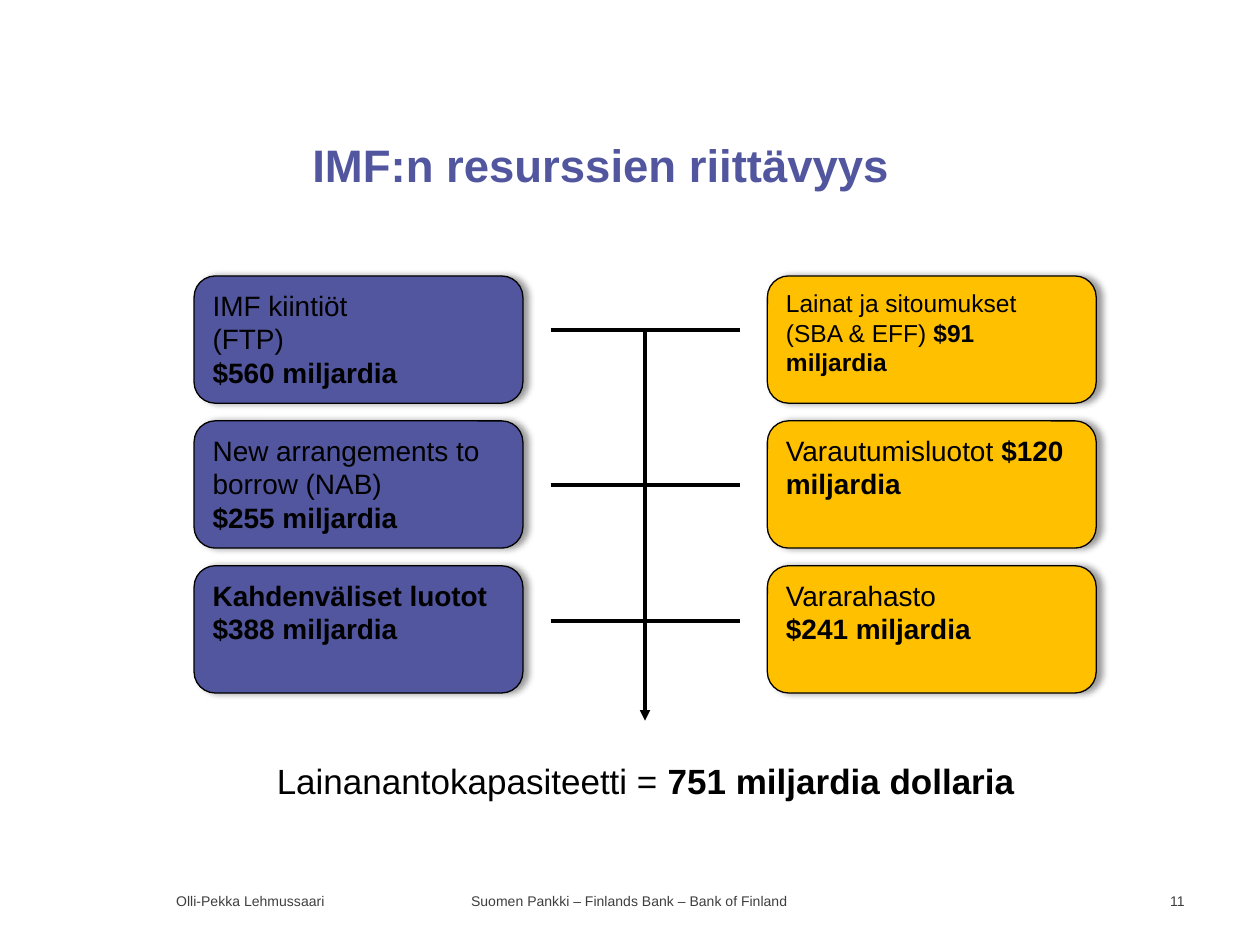
"""Build the slide on the sufficiency of IMF resources."""
from lxml import etree
from pptx import Presentation
from pptx.dml.color import RGBColor
from pptx.enum.shapes import MSO_CONNECTOR, MSO_SHAPE
from pptx.enum.text import MSO_ANCHOR, PP_ALIGN
from pptx.oxml.ns import qn
from pptx.util import Pt

LEFT, CENTER, RIGHT = PP_ALIGN.LEFT, PP_ALIGN.CENTER, PP_ALIGN.RIGHT
TOP, MIDDLE, BOTTOM = MSO_ANCHOR.TOP, MSO_ANCHOR.MIDDLE, MSO_ANCHOR.BOTTOM
ROUNDED, STRAIGHT = MSO_SHAPE.ROUNDED_RECTANGLE, MSO_CONNECTOR.STRAIGHT
INDIGO = RGBColor(0x51, 0x56, 0x9E)
AMBER = RGBColor(0xFF, 0xC0, 0x00)
BLACK = RGBColor(0, 0, 0)
GREY = RGBColor(0x3F, 0x3E, 0x3E)

TITLE = [[("IMF:n resurssien riittävyys", True)]]
RESOURCES = [
    (16, [[("IMF kiintiöt", False)], [("(FTP)", False)], [("$560 miljardia", True)]]),
    (16, [[("New arrangements to borrow (NAB)", False)], [("$255 miljardia", True)]]),
    (16, [[("Kahdenväliset luotot $388 miljardia", True)]]),
]
COMMITMENTS = [
    (14, [[("Lainat ja sitoumukset (SBA & EFF) ", False), ("$91 miljardia", True)]]),
    (16, [[("Varautumisluotot ", False), ("$120 miljardia", True)]]),
    (16, [[("Vararahasto", False)], [("$241 miljardia", True)]]),
]
CAPACITY = [[("Lainanantokapasiteetti = ", False), ("751 miljardia dollaria", True)]]
FOOTERS = [
    ("Olli-Pekka Lehmussaari", 93.6, 151.9, LEFT),
    ("Suomen Pankki – Finlands Bank – Bank of Finland", 254.2, 211, CENTER),
    ("11", 643, 41, RIGHT),
]

COLUMNS = [(110.9, INDIGO, RESOURCES), (438.5, AMBER, COMMITMENTS)]
CARD_TOP, CARD_PITCH, CARD_WIDTH, CARD_HEIGHT = 157.7, 82.8, 187.9, 72.7
RUNG_LEFT, RUNG_RIGHT, RUNG_TOPS = 314.6, 422.6, (188.6, 277.2, 355)
ARROW_END = 411.8


def write(shape, paragraphs, size=16, color=BLACK, align=LEFT, anchor=TOP):
    frame = shape.text_frame
    frame.word_wrap = True
    frame.vertical_anchor = anchor
    for index, spans in enumerate(paragraphs):
        para = frame.paragraphs[0] if index == 0 else frame.add_paragraph()
        para.alignment = align
        for text, bold in spans:
            span = para.add_run()
            span.text = text
            span.font.name = "Arial"
            span.font.size = Pt(size)
            span.font.bold = bold
            span.font.color.rgb = color


def add_text(page, place, paragraphs, **style):
    box = page.shapes.add_textbox(*map(Pt, place))
    write(box, paragraphs, **style)


def add_card(page, left, top, fill, size, paragraphs):
    card = page.shapes.add_shape(ROUNDED, *map(Pt, (left, top, CARD_WIDTH, CARD_HEIGHT)))
    card.fill.solid()
    card.fill.fore_color.rgb = fill
    card.line.color.rgb = BLACK
    card.line.width = Pt(0.75)
    card.shadow.inherit = False
    effects = card.element.spPr.find(qn("a:effectLst"))
    shadow = etree.SubElement(effects, qn("a:outerShdw"), blurRad=str(Pt(4)),
                              dist=str(Pt(3)), dir="0", rotWithShape="0")
    tint = etree.SubElement(shadow, qn("a:srgbClr"), val=str(BLACK))
    etree.SubElement(tint, qn("a:alpha"), val="40000")
    write(card, paragraphs, size=size)


def add_line(page, start_x, start_y, end_x, end_y, arrow=False):
    line = page.shapes.add_connector(STRAIGHT, *map(Pt, (start_x, start_y, end_x, end_y)))
    line.line.color.rgb = BLACK
    line.line.width = Pt(2)
    if arrow:
        etree.SubElement(line.line._get_or_add_ln(), qn("a:tailEnd"), type="triangle")
    etree.SubElement(line.element.spPr, qn("a:effectLst"))


def main():
    deck = Presentation()
    deck.slide_width, deck.slide_height = Pt(720), Pt(540)
    page = deck.slides.add_slide(deck.slide_layouts[6])

    add_text(page, (171.4, 23, 515.5, 90), TITLE, size=26, color=INDIGO, anchor=BOTTOM)
    for left, fill, cards in COLUMNS:
        for row, (size, paragraphs) in enumerate(cards):
            add_card(page, left, CARD_TOP + row * CARD_PITCH, fill, size, paragraphs)
    add_text(page, (110.9, 430.6, 516.2, 31.7), CAPACITY, size=20, align=CENTER)

    for top in RUNG_TOPS:
        add_line(page, RUNG_LEFT, top, RUNG_RIGHT, top)
    middle = (RUNG_LEFT + RUNG_RIGHT) / 2
    add_line(page, middle, RUNG_TOPS[0], middle, ARROW_END, arrow=True)

    for text, left, width, align in FOOTERS:
        add_text(page, (left, 500.4, width, 28.8), [[(text, False)]],
                 size=8, color=GREY, align=align, anchor=MIDDLE)
    deck.save("out.pptx")


if __name__ == "__main__":
    main()
